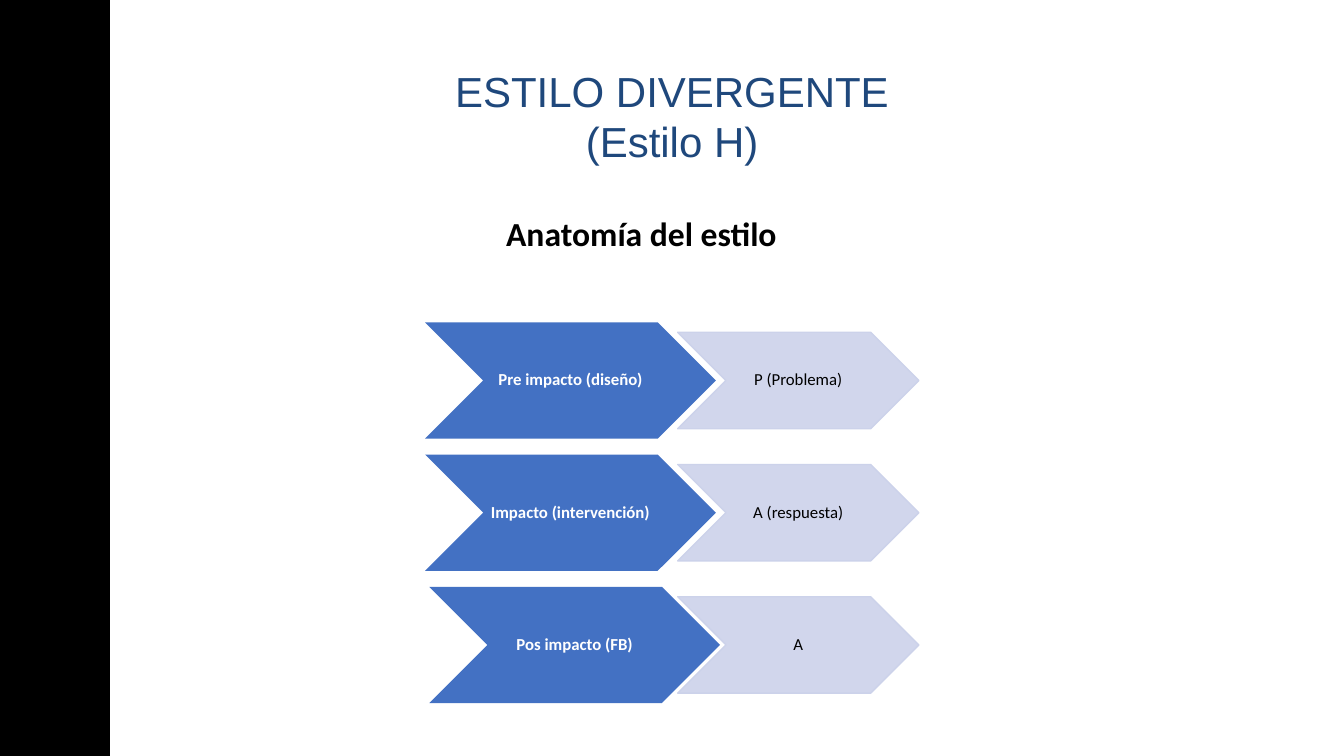
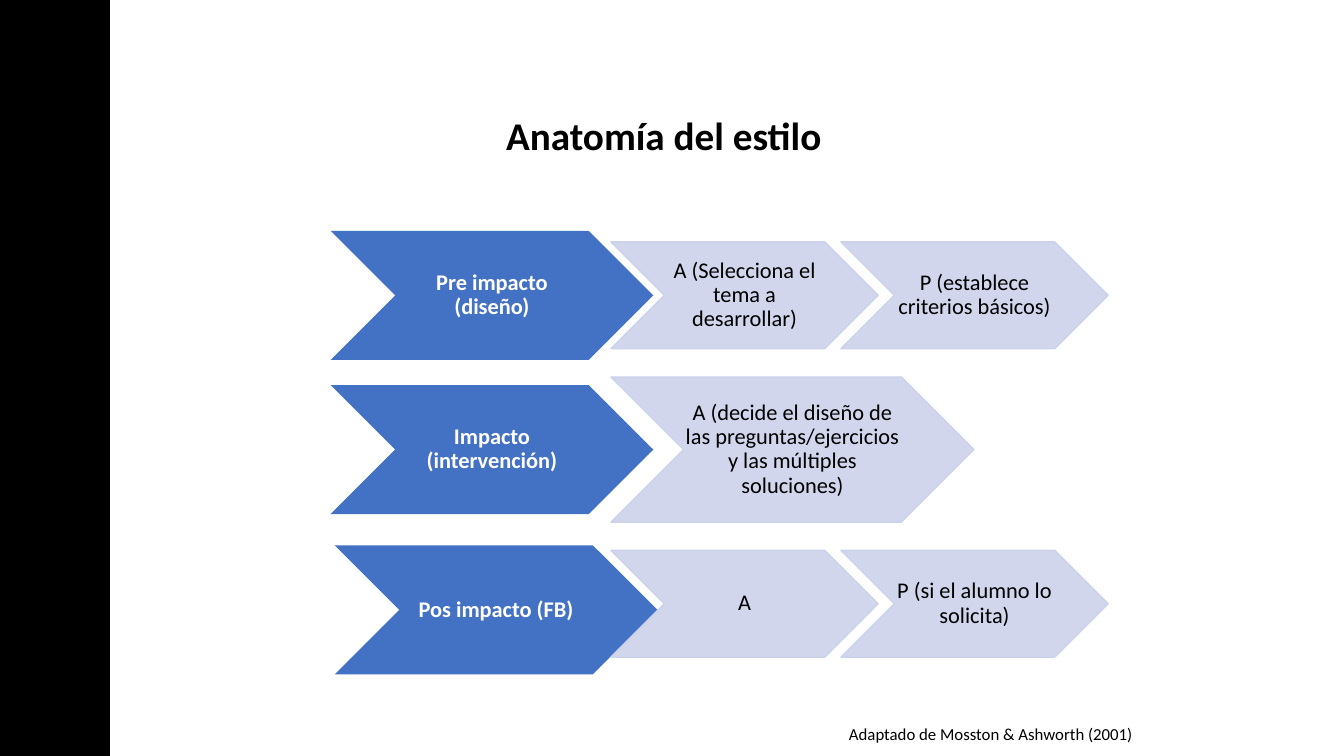
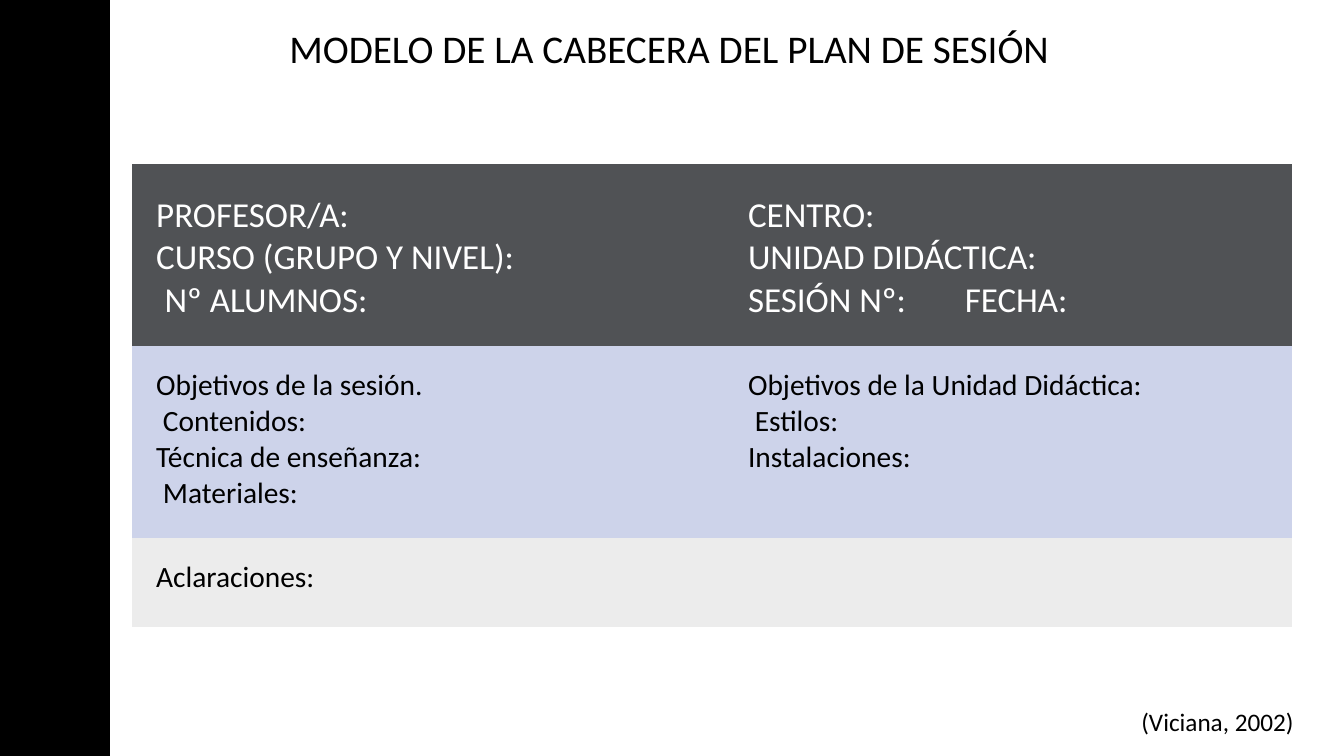
from lxml.etree import SubElement
from pptx import Presentation
from pptx.dml.color import RGBColor
from pptx.enum.shapes import MSO_SHAPE
from pptx.enum.text import MSO_ANCHOR, PP_ALIGN
from pptx.oxml.ns import qn
from pptx.util import Inches, Pt

COLS, ROWS = 80, 45  # square grid cells over the whole slide
BLACK, WHITE, NAVY = "000000", "FFFFFF", "1F487C"
BLUE, PALE = "4371C3", "CCD2EA"
SLATE, LILAC, GREY = "505255", "CDD3EA", "ECECEC"


def color(code):
    return RGBColor.from_string(code)


class Deck:
    def __init__(self):
        self.file = Presentation()
        self.file.slide_width = Inches(13.33)
        self.file.slide_height = Inches(7.5)
        self.slide = None

    def cell(self, count):
        """Length of a number of grid cells."""
        return int(self.file.slide_height * count / ROWS)

    def page(self):
        """New slide with the black side band."""
        self.slide = self.file.slides.add_slide(self.file.slide_layouts[6])
        self.shape(MSO_SHAPE.RECTANGLE, 0, 0, 6.5, ROWS, BLACK, BLACK)

    def shape(self, kind, left, top, width, height, fill, line=None):
        item = self.slide.shapes.add_shape(
            kind, *map(self.cell, (left, top, width, height)))
        item.shadow.inherit = False
        item.fill.solid()
        item.fill.fore_color.rgb = color(fill)
        if line:
            item.line.color.rgb = color(line)
            item.line.width = Pt(1)
        else:
            item.line.fill.background()
        return item

    def put(self, frame, lines, size, ink=BLACK, bold=False,
            align=PP_ALIGN.LEFT, face="Calibri", space=None):
        """One paragraph per line; a line may be (text, indent, tab)."""
        for i, line in enumerate(lines):
            text, indent, tab = (line, 0, 0) if isinstance(line, str) else line
            para = frame.paragraphs[0] if i == 0 else frame.add_paragraph()
            para.text = text
            para.alignment = align
            if space:
                para.line_spacing = space
            props = para._p.get_or_add_pPr()
            if indent:
                props.set("marL", str(self.cell(indent)))
            if tab:
                tabs = SubElement(props, qn("a:tabLst"))
                SubElement(tabs, qn("a:tab"), pos=str(self.cell(tab)), algn="l")
            font = para.font
            font.name, font.size, font.bold = face, Pt(size), bold
            font.color.rgb = color(ink)

    def clear(self, frame):
        frame.margin_left = frame.margin_right = 0
        frame.margin_top = frame.margin_bottom = 0

    def text(self, left, top, width, lines, size, **style):
        box = self.slide.shapes.add_textbox(
            *map(self.cell, (left, top, width, len(lines) * size / 10)))
        frame = box.text_frame
        frame.word_wrap = True
        self.clear(frame)
        self.put(frame, lines, size, **style)

    def arrow(self, left, mid, width, text, size, main=False):
        """Chevron centred on the row mid, 2.5 times as wide as high."""
        high = width / 2.5
        item = self.shape(MSO_SHAPE.CHEVRON, left, mid - high / 2, width, high,
                          BLUE if main else PALE, None if main else PALE)
        if not main:
            tint = item.fill._xPr.find(qn("a:solidFill"))[0]
            SubElement(tint, qn("a:alpha"), val="90000")
        frame = item.text_frame
        frame.word_wrap = False
        frame.vertical_anchor = MSO_ANCHOR.MIDDLE
        self.clear(frame)
        self.put(frame, text.split("\n"), size, WHITE if main else BLACK,
                 main, PP_ALIGN.CENTER, space=0.9)

    def table(self, left, top, widths, rows, pads):
        """Rows are (height, fill, ink, size, top margin, cells)."""
        frame = self.slide.shapes.add_table(
            len(rows), len(widths), self.cell(left), self.cell(top),
            self.cell(sum(widths)), self.cell(sum(row[0] for row in rows)))
        grid = frame.table
        grid.first_row = grid.horz_banding = False
        for col, width in zip(grid.columns, widths):
            col.width = self.cell(width)
        for r, (high, fill, ink, size, gap, cells) in enumerate(rows):
            grid.rows[r].height = self.cell(high)
            for c, pad in enumerate(pads):
                box = grid.cell(r, c)
                box.margin_left, box.margin_top = self.cell(pad), self.cell(gap)
                box.margin_right = box.margin_bottom = 0
                props = box._tc.get_or_add_tcPr()
                for side in "LRTB":
                    edge = SubElement(props, qn(f"a:ln{side}"), w="0")
                    SubElement(edge, qn("a:noFill"))
                box.fill.solid()
                box.fill.fore_color.rgb = color(fill)
                if c < len(cells):
                    self.put(box.text_frame, cells[c], size, ink)
            if len(cells) < len(widths):
                grid.cell(r, 0).merge(grid.cell(r, len(widths) - 1))


def main():
    deck = Deck()

    # Slide 1: divergent style, two steps per phase
    deck.page()
    phases = [("Pre impacto (diseño)", "P (Problema)", 25.3),
              ("Impacto (intervención)", "A (respuesta)", 25.3),
              ("Pos impacto (FB)", "A", 25.55)]
    for i, (phase, role, left) in enumerate(phases):
        mid = 22.65 + 7.87 * i
        deck.arrow(left, mid, 17.3, phase, 12, main=True)
        deck.arrow(40.33, mid, 14.35, role, 12)
    deck.text(0, 3.9, COLS, ["ESTILO DIVERGENTE", "(Estilo H)"], 30,
              ink=NAVY, align=PP_ALIGN.CENTER, face="Arial")
    deck.text(30.12, 12.7, 20, ["Anatomía del estilo"], 24, bold=True)

    # Slide 2: who decides in each phase
    deck.page()
    deck.text(30.12, 6.6, 24, ["Anatomía del estilo"], 28, bold=True)
    phases = [
        ("Pre impacto\n(diseño)", 19.68, 0, 15.9,
         ["A (Selecciona el\ntema a\ndesarrollar)",
          "P (establece\ncriterios básicos)"]),
        ("Impacto\n(intervención)", 19.68, 0, 21.6,
         ["A (decide el diseño de\nlas preguntas/ejercicios\n"
          "y las múltiples\nsoluciones)"]),
        ("Pos impacto (FB)", 19.92, 0.36, 15.9,
         ["A", "P (si el alumno lo\nsolicita)"])]
    for i, (phase, left, drop, width, roles) in enumerate(phases):
        mid = 17.58 + 9.18 * i
        deck.arrow(left, mid + drop, 19.2, phase, 16, main=True)
        for j, role in enumerate(roles):
            deck.arrow(36.36 + 13.68 * j, mid, width, role, 16)
    deck.text(50.52, 43.1, 20, ["Adaptado de Mosston & Ashworth (2001)"], 12)

    # Slide 3: header of the session plan
    deck.page()
    deck.text(17.22, 1.45, 50, ["MODELO DE LA CABECERA DEL PLAN DE SESIÓN"], 28)
    deck.table(7.86, 9.75, [29.7, 39.3], [
        (10.84, SLATE, WHITE, 25, 1.8, [
            ["PROFESOR/A:", "CURSO (GRUPO Y NIVEL):", ("Nº ALUMNOS:", 0.5, 0)],
            ["CENTRO:", "UNIDAD DIDÁCTICA:", ("SESIÓN Nº:\tFECHA:", 0, 12.9)]]),
        (11.43, LILAC, BLACK, 21, 1.3, [
            ["Objetivos de la sesión.", ("Contenidos:", 0.4, 0),
             "Técnica de enseñanza:", ("Materiales:", 0.4, 0)],
            ["Objetivos de la Unidad Didáctica:", ("Estilos:", 0.4, 0),
             "Instalaciones:"]]),
        (5.3, GREY, BLACK, 21, 1.3, [["Aclaraciones:"]]),
    ], [1.44, 6.96])
    deck.text(67.92, 42.05, 11, ["(Viciana, 2002)"], 18)

    deck.file.save("out.pptx")


if __name__ == "__main__":
    main()
